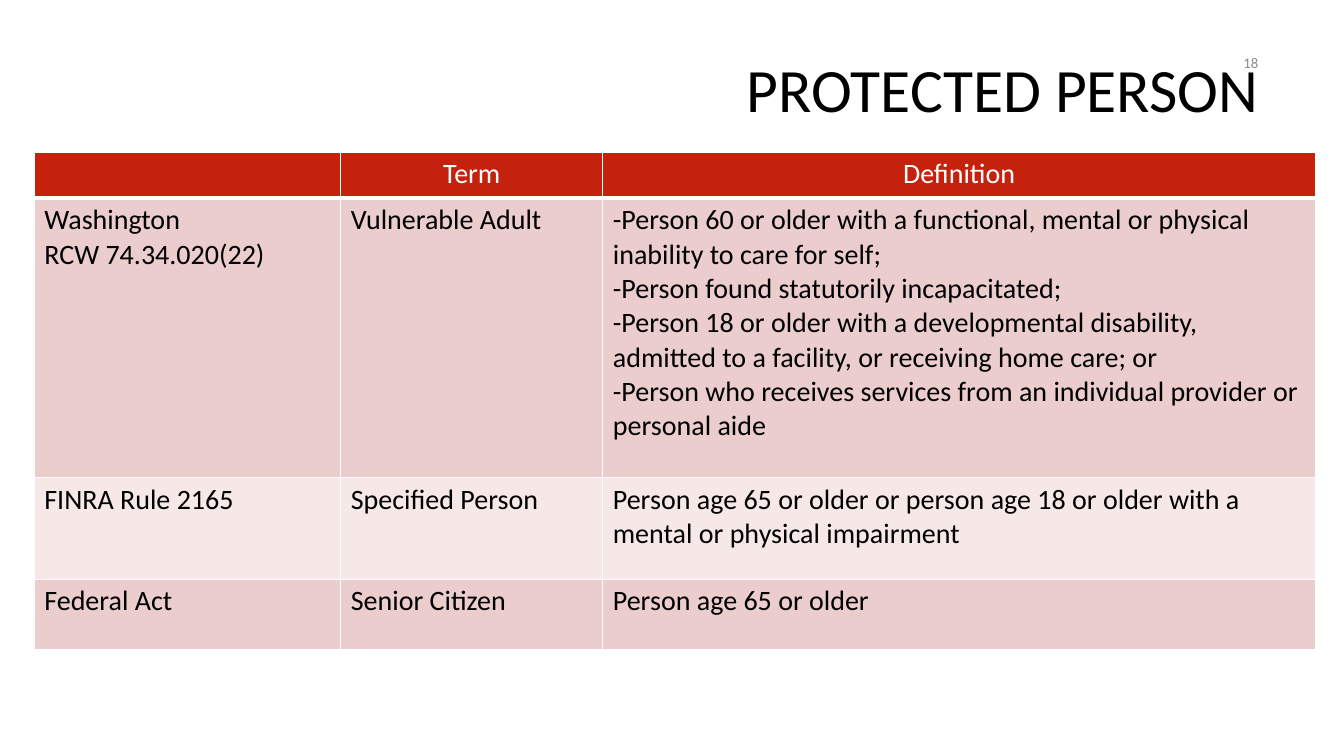
import pptx
import pptx.dml.color
import pptx.enum.text
import pptx.oxml
import pptx.oxml.ns
import pptx.util
from pptx.util import Pt

FONT = "Calibri"
HEADER_FILL = "C4220D"
BAND_FILLS = ["EACDCC", "F5E8E7"]
COLUMN_WIDTHS = [218.9, 187.2, 509]
ROW_HEIGHTS = [33.1, 199.4, 72.7, 50.4]
ROWS = [
    ["", "Term", "Definition"],
    [
        "Washington\nRCW 74.34.020(22)",
        "Vulnerable Adult",
        "-Person 60 or older with a functional, mental or physical inability to care for self;\n"
        "-Person found statutorily incapacitated;\n"
        "-Person 18 or older with a developmental disability, admitted to a facility, "
        "or receiving home care; or\n"
        "-Person who receives services from an individual provider or personal aide",
    ],
    [
        "FINRA Rule 2165",
        "Specified Person",
        "Person age 65 or older or person age 18 or older with a mental or physical impairment",
    ],
    ["Federal Act", "Senior Citizen", "Person age 65 or older"],
]


def color(value):
    return pptx.dml.color.RGBColor.from_string(value)


def format_text(text_frame, size, font_color, alignment):
    for paragraph in text_frame.paragraphs:
        paragraph.alignment = alignment
        paragraph.font.size = Pt(size)
        for run in paragraph.runs:
            run.font.name = FONT
            run.font.size = Pt(size)
            run.font.color.rgb = color(font_color)


def add_right_text(slide, text, left, top, width, height, size, font_color, line_spacing):
    shape = slide.shapes.add_textbox(Pt(left), Pt(top), Pt(width), Pt(height))
    text_frame = shape.text_frame
    text_frame.word_wrap = True
    text_frame.vertical_anchor = pptx.enum.text.MSO_ANCHOR.MIDDLE
    text_frame.text = text
    text_frame.paragraphs[0].line_spacing = line_spacing
    format_text(text_frame, size, font_color, pptx.enum.text.PP_ALIGN.RIGHT)


def set_borders(cell, widths):
    properties = cell._tc.get_or_add_tcPr()
    for position, (side, width) in enumerate(widths.items()):
        border = pptx.oxml.parse_xml(
            f'<a:ln{side} {pptx.oxml.ns.nsdecls("a")} w="{Pt(width)}">'
            '<a:solidFill><a:srgbClr val="FFFFFF"/></a:solidFill>'
            f"</a:ln{side}>"
        )
        properties.insert(position, border)


def fill_cell(cell, text, fill, font_color, alignment, borders):
    cell.text_frame.text = text
    format_text(cell.text_frame, 20, font_color, alignment)
    cell.fill.solid()
    cell.fill.fore_color.rgb = color(fill)
    set_borders(cell, borders)


def add_definitions_table(slide, left, top):
    shape = slide.shapes.add_table(
        len(ROWS), len(COLUMN_WIDTHS), Pt(left), Pt(top),
        Pt(sum(COLUMN_WIDTHS)), Pt(sum(ROW_HEIGHTS)),
    )
    table = shape.table
    for column, width in zip(table.columns, COLUMN_WIDTHS):
        column.width = Pt(width)
    for row_index, texts in enumerate(ROWS):
        table.rows[row_index].height = Pt(ROW_HEIGHTS[row_index])
        is_header = row_index == 0
        fill = HEADER_FILL if is_header else BAND_FILLS[(row_index - 1) % 2]
        font_color = "FFFFFF" if is_header else "000000"
        alignment = pptx.enum.text.PP_ALIGN.CENTER if is_header else pptx.enum.text.PP_ALIGN.LEFT
        borders = {"L": 1, "R": 1, "T": 3 if row_index == 1 else 1, "B": 3 if is_header else 1}
        for column_index, text in enumerate(texts):
            cell = table.cell(row_index, column_index)
            fill_cell(cell, text, fill, font_color, alignment, borders)


def main():
    presentation = pptx.Presentation()
    presentation.slide_width = Pt(960)
    presentation.slide_height = Pt(540)
    slide = presentation.slides.add_slide(presentation.slide_layouts[6])
    add_right_text(slide, "PROTECTED PERSON", 228.2, 5.8, 678.2, 120.2, 44, "000000", 0.9)
    add_definitions_table(slide, 24.5, 108.5)
    add_right_text(slide, "18", 689.8, 30.2, 216, 28.8, 10.5, "8C8C8C", 1.0)
    presentation.save("out.pptx")


if __name__ == "__main__":
    main()
